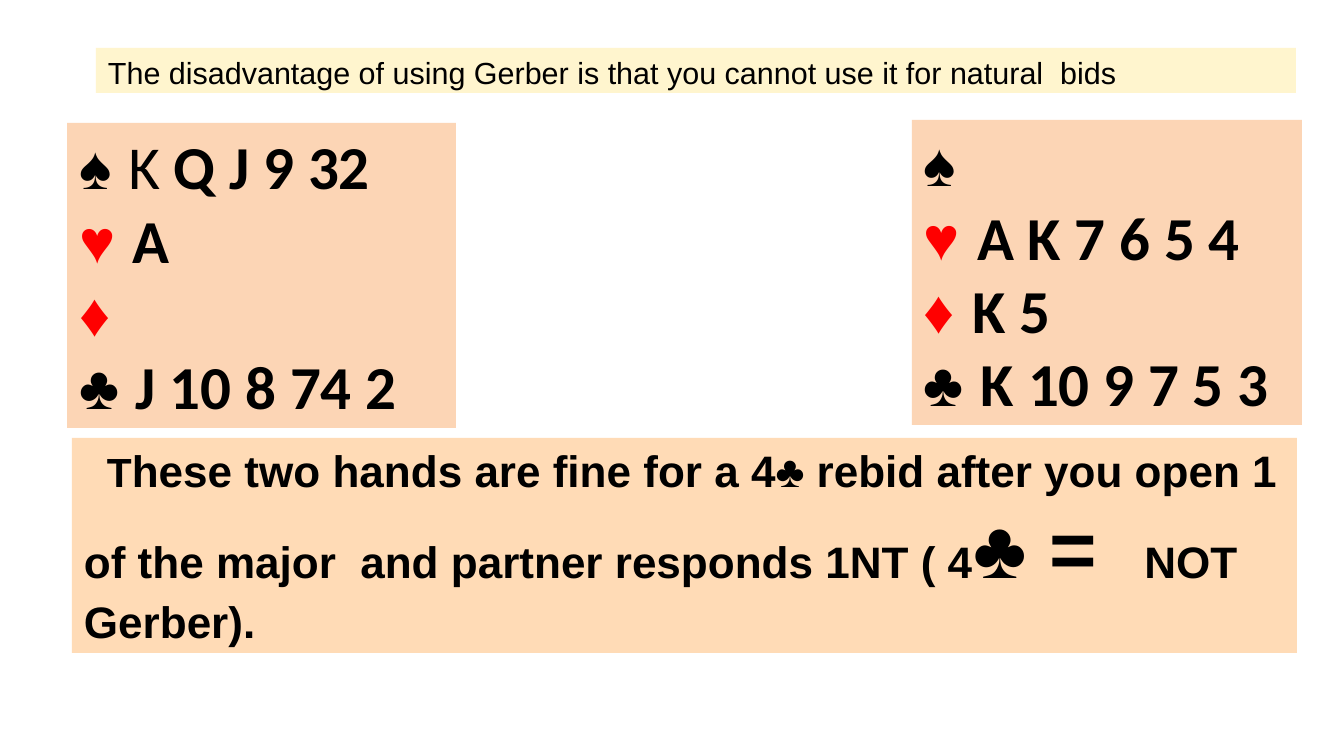
from pptx import Presentation
from pptx.dml.color import RGBColor
from pptx.enum.text import MSO_ANCHOR, MSO_AUTO_SIZE, PP_ALIGN
from pptx.util import Pt

LEFT, TOP = PP_ALIGN.LEFT, MSO_ANCHOR.TOP
GROW, FIXED = MSO_AUTO_SIZE.SHAPE_TO_FIT_TEXT, MSO_AUTO_SIZE.NONE
EMU_PER_PX = 914400 / 122
SLIDE_SIZE = 1344, 756
INSETS = {"margin_left": 12, "margin_right": 12, "margin_top": 6, "margin_bottom": 6}
BLACK, RED, PEACH, APRICOT, CREAM = "000000", "FF0000", "FCD5B5", "FFDBB6", "FFF5CE"

# Each suit line: symbol, light cards, bold cards
HANDS = [
    ((67, 123, 389, 305), [("♠", "K ", "Q J 9 32"), ("♥", "", "A"),
                           ("♦", "", ""), ("♣", "", "J 10 8 74 2")]),
    ((912, 120, 390, 305), [("♠", "", ""), ("♥", "", "A K 7 6 5 4"),
                            ("♦", "", "K 5"), ("♣", "", "K 10 9 7 5 3")]),
]
ADVICE_BOX = 72, 438, 1225, 215
ADVICE_INDENT = 23
ADVICE = [
    ("T", 24),
    ("hese two hands are fine for a 4♣ rebid after you open 1 of the major  "
     "and partner responds 1NT ( 4", 26),
    ("♣ = ", 48),
    ("  NOT Gerber).", 26),
]
HEADING_BOX = 96, 48, 1200, 45
HEADING = "The disadvantage of using Gerber is that you cannot use it for natural  bids"


def px(length):
    return round(length * EMU_PER_PX)


def color(hex_string):
    return RGBColor.from_string(hex_string)


def styled(text, size, bold=True, font="Arial", ink=BLACK):
    return text, ink, {"size": Pt(size), "bold": bold, "name": font}


def suit_line(symbol, light, strong):
    """Return the runs of one suit, leaving out empty groups of cards."""
    gap = " " if light or strong else ""
    ink = RED if symbol in "♥♦" else BLACK
    runs = [styled(symbol + gap, 36, not light, ink=ink),
            styled(light, 36, False, "Calibri"),
            styled(strong, 36, True, "Calibri")]
    return [run for run in runs if run[0]]


def add_panel(slide, box, fill, lines, sizing=GROW):
    panel = slide.shapes.add_textbox(*map(px, box))
    panel.fill.solid()
    panel.fill.fore_color.rgb = color(fill)
    frame = panel.text_frame
    frame.word_wrap = True
    frame.auto_size = sizing
    frame.vertical_anchor = TOP
    for side, inset in INSETS.items():
        setattr(frame, side, px(inset))
    for number, line in enumerate(lines):
        paragraph = frame.add_paragraph() if number else frame.paragraphs[0]
        paragraph.alignment = LEFT
        for text, ink, font_format in line:
            run = paragraph.add_run()
            run.text = text
            run.font.color.rgb = color(ink)
            for key, value in font_format.items():
                setattr(run.font, key, value)
    return frame


def main():
    deck = Presentation()
    deck.slide_width, deck.slide_height = map(px, SLIDE_SIZE)
    slide = deck.slides.add_slide(deck.slide_layouts[6])
    for box, suits in HANDS:
        add_panel(slide, box, PEACH, [suit_line(*suit) for suit in suits])
    advice = add_panel(slide, ADVICE_BOX, APRICOT, [[styled(*part) for part in ADVICE]])
    advice.paragraphs[0]._p.get_or_add_pPr().set("indent", str(px(ADVICE_INDENT)))
    add_panel(slide, HEADING_BOX, CREAM, [[styled(HEADING, 18, False)]], FIXED)
    deck.save("out.pptx")


if __name__ == "__main__":
    main()
